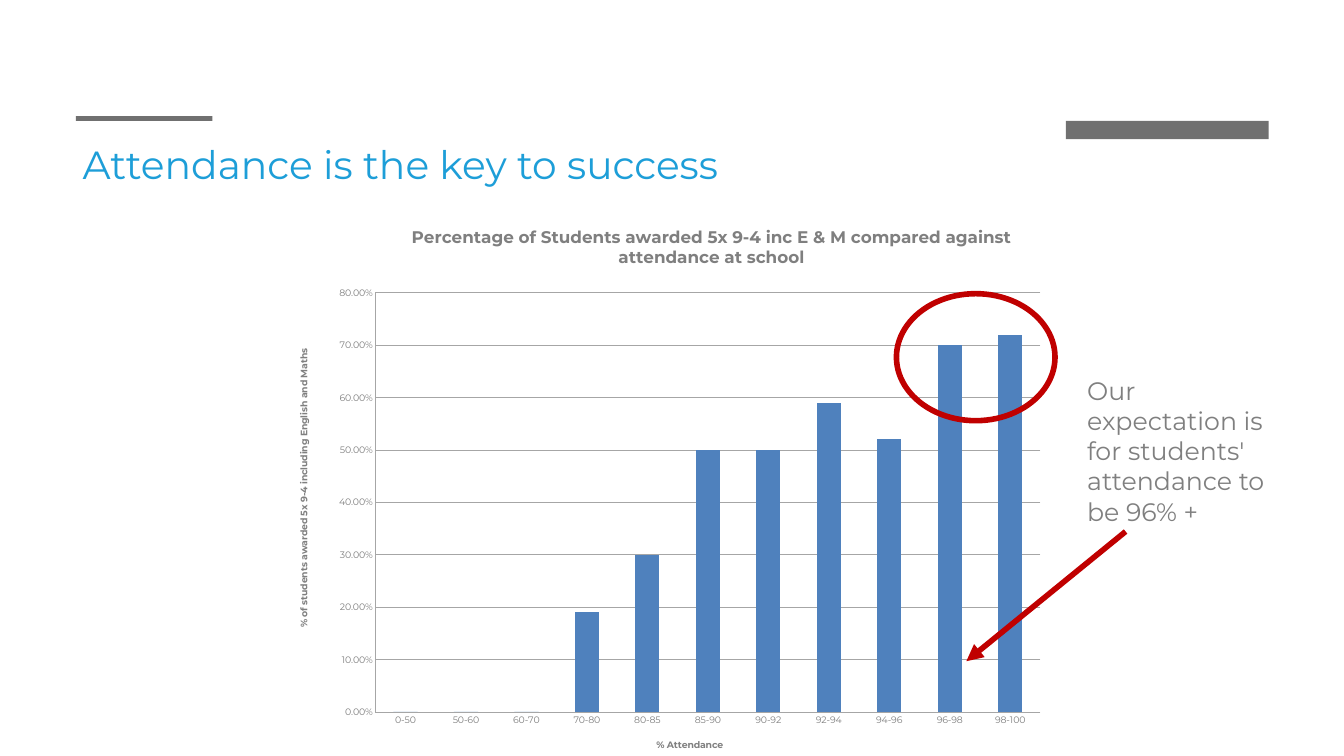
"""Build a slide with a column chart of exam success by attendance band."""
from lxml import etree
from pptx import Presentation
from pptx.chart.data import CategoryChartData
from pptx.dml.color import RGBColor
from pptx.enum.chart import XL_CHART_TYPE, XL_TICK_MARK
from pptx.enum.shapes import MSO_CONNECTOR, MSO_SHAPE
from pptx.enum.text import MSO_ANCHOR
from pptx.oxml.ns import qn
from pptx.util import Inches, Pt

COLUMN = XL_CHART_TYPE.COLUMN_CLUSTERED
NO_TICK = XL_TICK_MARK.NONE
STRAIGHT = MSO_CONNECTOR.STRAIGHT
RECT, OVAL = MSO_SHAPE.RECTANGLE, MSO_SHAPE.OVAL
TOP, MIDDLE = MSO_ANCHOR.TOP, MSO_ANCHOR.MIDDLE
FONT = "Montserrat"
GREY, RED = "7F7F7F", "C00000"


def rgb(value):
    """Turn a hex string into a colour."""
    return RGBColor.from_string(value)


def set_layout(parent, index, **values):
    """Give a chart part a manual layout."""
    for old in parent.findall(qn("c:layout")):
        parent.remove(old)
    layout = etree.Element(qn("c:layout"))
    manual = etree.SubElement(layout, qn("c:manualLayout"))
    for tag, val in values.items():
        etree.SubElement(manual, qn(f"c:{tag}")).set("val", str(val))
    parent.insert(index, layout)


prs = Presentation()
prs.slide_width, prs.slide_height = Inches(20), Inches(11.25)
s = prs.slides.add_slide(prs.slide_layouts[6])

for x, y, w, h in [(1.13, 1.73, 2.03, 0.07), (15.86, 1.8, 3.02, 0.27)]:
    sp = s.shapes.add_shape(RECT, Inches(x), Inches(y), Inches(w), Inches(h))
    sp.shadow.inherit = False
    sp.fill.solid()
    sp.fill.fore_color.rgb = rgb("707070")
    sp.line.fill.background()

bands = ["0-50", "50-60", "60-70", "70-80", "80-85", "85-90",
         "90-92", "92-94", "94-96", "96-98", "98-100"]
data = CategoryChartData(number_format="0.00%")
data.categories = bands
data.add_series("Series 1", [0, 0, 0, 0.19, 0.3, 0.5, 0.5, 0.59, 0.52, 0.7, 0.72])
chart = s.shapes.add_chart(COLUMN, Inches(4.2), Inches(3.31), Inches(13.06),
                           Inches(8.06), data).chart
chart.has_legend = False
chart.font.name, chart.font.size = FONT, Pt(10)
chart.font.color.rgb = rgb(GREY)
plot = chart.plots[0]
plot.gap_width = 150
plot.vary_by_categories = False
fill = plot.series[0].format.fill
fill.solid()
fill.fore_color.rgb = rgb("4F81BD")

cat_axis, val_axis = chart.category_axis, chart.value_axis
val_axis.minimum_scale, val_axis.maximum_scale, val_axis.major_unit = 0, 0.8, 0.1
val_axis.has_major_gridlines = True
val_axis.major_gridlines.format.line.color.rgb = rgb("A6A6A6")
val_axis.tick_labels.number_format = "0.00%"
val_axis.tick_labels.number_format_is_linked = False
for axis in (cat_axis, val_axis):
    axis.major_tick_mark = axis.minor_tick_mark = NO_TICK
    axis.format.line.color.rgb = rgb("A6A6A6")

titles = [
    (chart, "Percentage of Students awarded 5x 9-4 inc E & M compared against "
            "attendance at school", 18),
    (cat_axis, "% Attendance", 10),
    (val_axis, "% of students awarded 5x 9-4 including English and Maths", 10),
]
for owner, text, size in titles:
    title = owner.chart_title if owner is chart else owner.axis_title
    r = title.text_frame.paragraphs[0].add_run()
    r.text = text
    r.font.name, r.font.size, r.font.bold = FONT, Pt(size), True
    r.font.color.rgb = rgb(GREY)

for title, x, y in [(chart.chart_title, 0.144, 0), (val_axis.axis_title, 0.015, 0.23)]:
    set_layout(title._element, 1, xMode="edge", yMode="edge", x=x, y=y)
area = chart._chartSpace.find(".//" + qn("c:plotArea"))
set_layout(area, 0, layoutTarget="inner", xMode="edge", yMode="edge",
           x=0.106, y=0.13, w=0.758, h=0.774)

sp = s.shapes.add_shape(OVAL, Inches(13.34), Inches(4.37), Inches(2.36), Inches(1.89))
sp.shadow.inherit = False
sp.fill.background()
sp.line.color.rgb, sp.line.width = rgb(RED), Pt(6)

texts = [
    (1.13, 1.7, 14.25, 1.47, "Attendance is the key to success", 42, "1D9ED8", MIDDLE),
    (16.08, 5.53, 3.2, 2.37, "Our expectation is for students' attendance to be 96% +",
     27, GREY, TOP),
]
for x, y, w, h, text, size, color, anchor in texts:
    tf = s.shapes.add_textbox(Inches(x), Inches(y), Inches(w), Inches(h)).text_frame
    tf.word_wrap = True
    tf.vertical_anchor = anchor
    r = tf.paragraphs[0].add_run()
    r.text = text
    r.font.name, r.font.size = FONT, Pt(size)
    r.font.color.rgb = rgb(color)

arrow = s.shapes.add_connector(STRAIGHT, Inches(16.75), Inches(7.91),
                               Inches(14.38), Inches(9.84))
arrow.line.color.rgb, arrow.line.width = rgb(RED), Pt(6)
etree.SubElement(arrow.line._get_or_add_ln(), qn("a:tailEnd")).set("type", "triangle")
etree.SubElement(arrow._element.spPr, qn("a:effectLst"))

prs.save("out.pptx")
